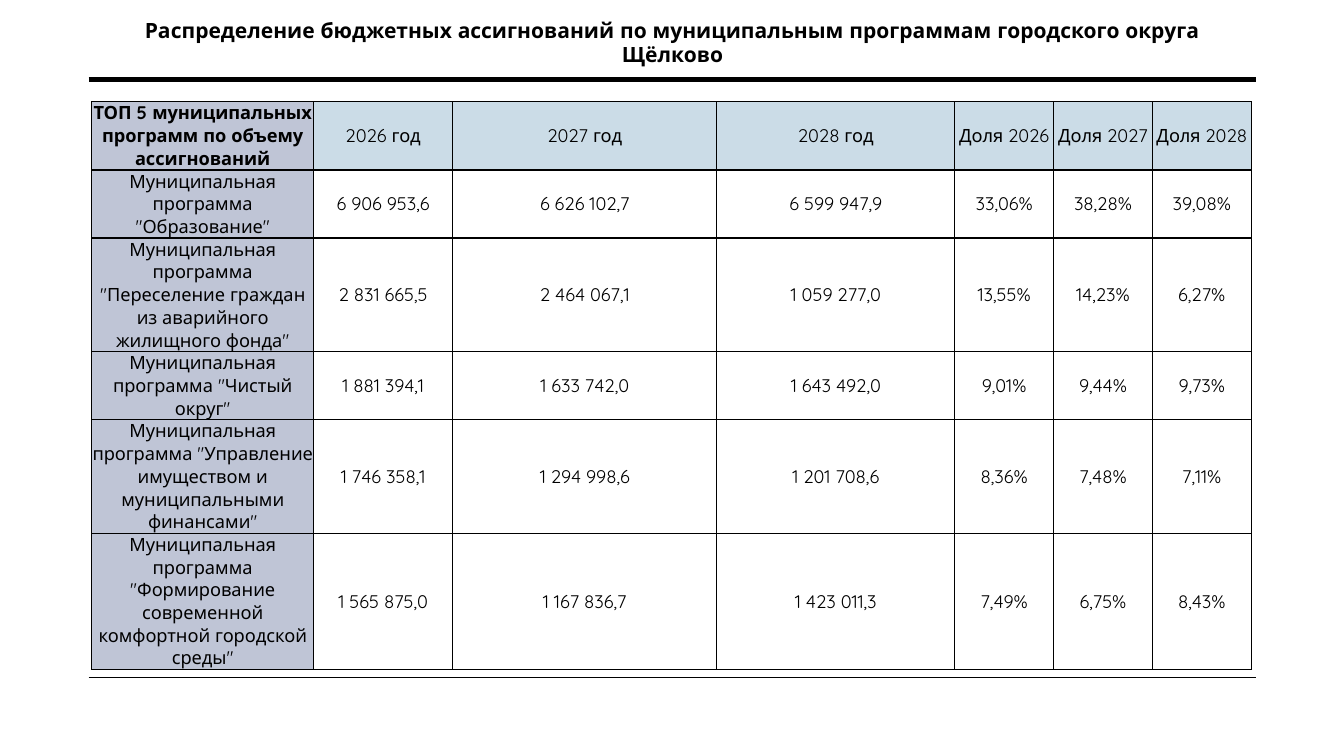
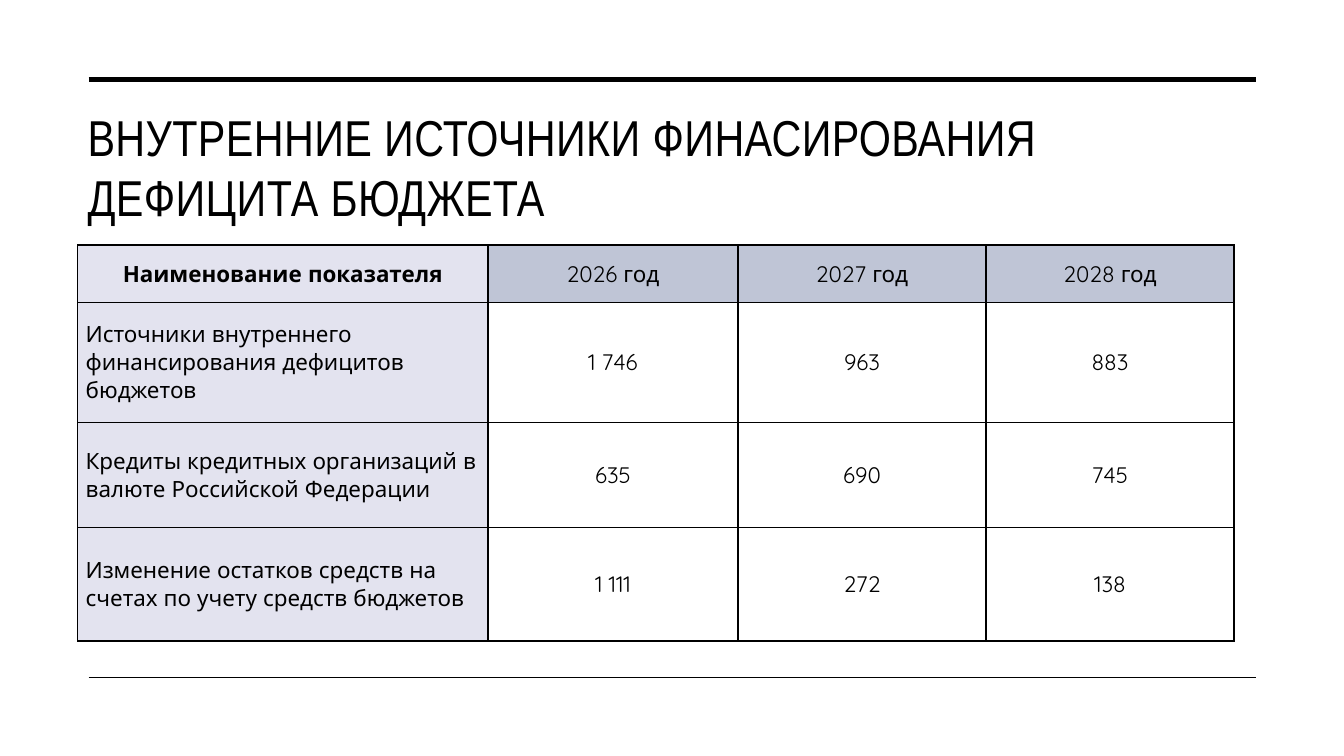
import lxml.etree
import pptx
import pptx.dml.color
import pptx.enum.shapes
import pptx.enum.text
import pptx.oxml.ns
import pptx.util

Inches = pptx.util.Inches
Pt = pptx.util.Pt
RGBColor = pptx.dml.color.RGBColor
Align = pptx.enum.text.PP_ALIGN
Anchor = pptx.enum.text.MSO_ANCHOR
qn = pptx.oxml.ns.qn

BLACK = RGBColor(0x00, 0x00, 0x00)
LAVENDER = RGBColor(0xBF, 0xC5, 0xD6)
PALE_LAVENDER = RGBColor(0xE3, 0xE3, 0xEF)
PALE_BLUE = RGBColor(0xCB, 0xDC, 0xE7)

PROGRAM_LINE_HEIGHT = 0.225
PROGRAM_LINES = (3, 3, 5, 3, 5, 6)
PROGRAMS = [
    ("ТОП 5 муниципальных программ по объему ассигнований",
     "2026 год", "2027 год", "2028 год", "Доля 2026", "Доля 2027", "Доля 2028"),
    ('Муниципальная программа "Образование"',
     "6 906 953,6", "6 626 102,7", "6 599 947,9", "33,06%", "38,28%", "39,08%"),
    ('Муниципальная программа "Переселение граждан из аварийного жилищного фонда"',
     "2 831 665,5", "2 464 067,1", "1 059 277,0", "13,55%", "14,23%", "6,27%"),
    ('Муниципальная программа "Чистый округ"',
     "1 881 394,1", "1 633 742,0", "1 643 492,0", "9,01%", "9,44%", "9,73%"),
    ('Муниципальная программа "Управление имуществом и муниципальными финансами"',
     "1 746 358,1", "1 294 998,6", "1 201 708,6", "8,36%", "7,48%", "7,11%"),
    ('Муниципальная программа "Формирование современной комфортной городской среды"',
     "1 565 875,0", "1 167 836,7", "1 423 011,3", "7,49%", "6,75%", "8,43%"),
]

DEFICIT_SOURCES = [
    ("Наименование показателя", "2026 год", "2027 год", "2028 год"),
    ("Источники внутреннего финансирования дефицитов бюджетов",
     "1 746", "963", "883"),
    ("Кредиты кредитных организаций в валюте Российской Федерации",
     "635", "690", "745"),
    ("Изменение остатков средств на счетах по учету средств бюджетов",
     "1 111", "272", "138"),
]


class Deck:
    body_font = "Quicksand"
    title_font = "Arial Narrow"
    rule_left, rule_right = 0.88, 12.46

    def __init__(self):
        self.presentation = pptx.Presentation()
        self.presentation.slide_width = Inches(13.33)
        self.presentation.slide_height = Inches(7.5)
        self.slide = None

    def add_slide(self):
        """Start a blank slide framed by the two shared rules."""
        layout = self.presentation.slide_layouts[6]
        self.slide = self.presentation.slides.add_slide(layout)
        self.add_rule(0.79, 3.5)
        self.add_rule(6.72, 1)

    def add_rule(self, top, weight):
        rule = self.slide.shapes.add_connector(
            pptx.enum.shapes.MSO_CONNECTOR.STRAIGHT,
            Inches(self.rule_left), Inches(top), Inches(self.rule_right), Inches(top))
        rule.line.color.rgb = BLACK
        rule.line.width = Pt(weight)
        lxml.etree.SubElement(rule._element.spPr, qn("a:effectLst"))

    def set_text(self, text_frame, text, font, size, bold=False, align=Align.CENTER):
        text_frame.text = text
        text_frame.word_wrap = True
        paragraph = text_frame.paragraphs[0]
        paragraph.alignment = align
        run = paragraph.runs[0]
        run.font.name = font
        run.font.size = Pt(size)
        run.font.bold = bold
        run.font.color.rgb = BLACK
        return paragraph

    def add_text_box(self, left, top, width, height, anchor):
        box = self.slide.shapes.add_textbox(
            Inches(left), Inches(top), Inches(width), Inches(height))
        box.text_frame.vertical_anchor = anchor
        return box.text_frame

    def add_heading(self, text):
        """Small bold heading above the top rule."""
        text_frame = self.add_text_box(0.87, 0.25, 11.6, 0.35, Anchor.MIDDLE)
        paragraph = self.set_text(text_frame, text, self.body_font, 15, bold=True)
        paragraph.line_spacing = 0.95

    def add_title(self, text):
        """Large title below the top rule."""
        text_frame = self.add_text_box(0.77, 1, 11.69, 1.43, Anchor.TOP)
        paragraph = self.set_text(text_frame, text, self.title_font, 36, align=Align.LEFT)
        paragraph.runs[0]._r.get_or_add_rPr().set("spc", "30")

    def add_table(self, left, top, widths, heights, rows, size,
                  label_fill, header_fill, label_align=Align.CENTER, label_indent=0):
        """Bordered table with a filled header row and label column."""
        table = self.slide.shapes.add_table(
            len(rows), len(widths), Inches(left), Inches(top),
            Inches(sum(widths)), Inches(sum(heights))).table
        table.first_row = table.horz_banding = False
        for column, width in zip(table.columns, widths):
            column.width = Inches(width)
        for row, height in zip(table.rows, heights):
            row.height = Inches(height)

        for row_index, values in enumerate(rows):
            for column_index, value in enumerate(values):
                cell = table.cell(row_index, column_index)
                is_header, is_label = row_index == 0, column_index == 0
                self.format_cell(cell)
                align = Align.CENTER
                if is_label and not is_header:
                    align = label_align
                    cell.margin_left = Inches(label_indent)
                self.set_text(cell.text_frame, value, self.body_font, size,
                              bold=is_header and is_label, align=align)
                if is_header or is_label:
                    cell.fill.solid()
                    cell.fill.fore_color.rgb = label_fill if is_label else header_fill
                else:
                    cell.fill.background()

    def format_cell(self, cell):
        """Remove margins, centre vertically and draw all four borders."""
        cell.margin_left = cell.margin_right = 0
        cell.margin_top = cell.margin_bottom = 0
        cell.vertical_anchor = Anchor.MIDDLE
        properties = cell._tc.get_or_add_tcPr()
        for side in ("a:lnL", "a:lnR", "a:lnT", "a:lnB"):
            border = lxml.etree.SubElement(properties, qn(side), w=str(Pt(1)))
            fill = lxml.etree.SubElement(border, qn("a:solidFill"))
            lxml.etree.SubElement(fill, qn("a:srgbClr"), val=str(BLACK))


def main():
    deck = Deck()

    deck.add_slide()
    deck.add_table(
        0.91, 1.01, (2.2, 1.38, 2.62, 2.36, 0.98, 0.98, 0.98),
        [lines * PROGRAM_LINE_HEIGHT for lines in PROGRAM_LINES],
        PROGRAMS, 13, label_fill=LAVENDER, header_fill=PALE_BLUE)
    deck.add_heading("Распределение бюджетных ассигнований по муниципальным "
                     "программам городского округа Щёлково")

    deck.add_slide()
    deck.add_title("ВНУТРЕННИЕ ИСТОЧНИКИ ФИНАСИРОВАНИЯ ДЕФИЦИТА БЮДЖЕТА")
    deck.add_table(
        0.77, 2.43, (4.07, 2.48, 2.46, 2.46), (0.57, 1.19, 1.04, 1.13),
        DEFICIT_SOURCES, 16, label_fill=PALE_LAVENDER, header_fill=LAVENDER,
        label_align=Align.LEFT, label_indent=0.08)

    deck.presentation.save("out.pptx")


if __name__ == "__main__":
    main()
